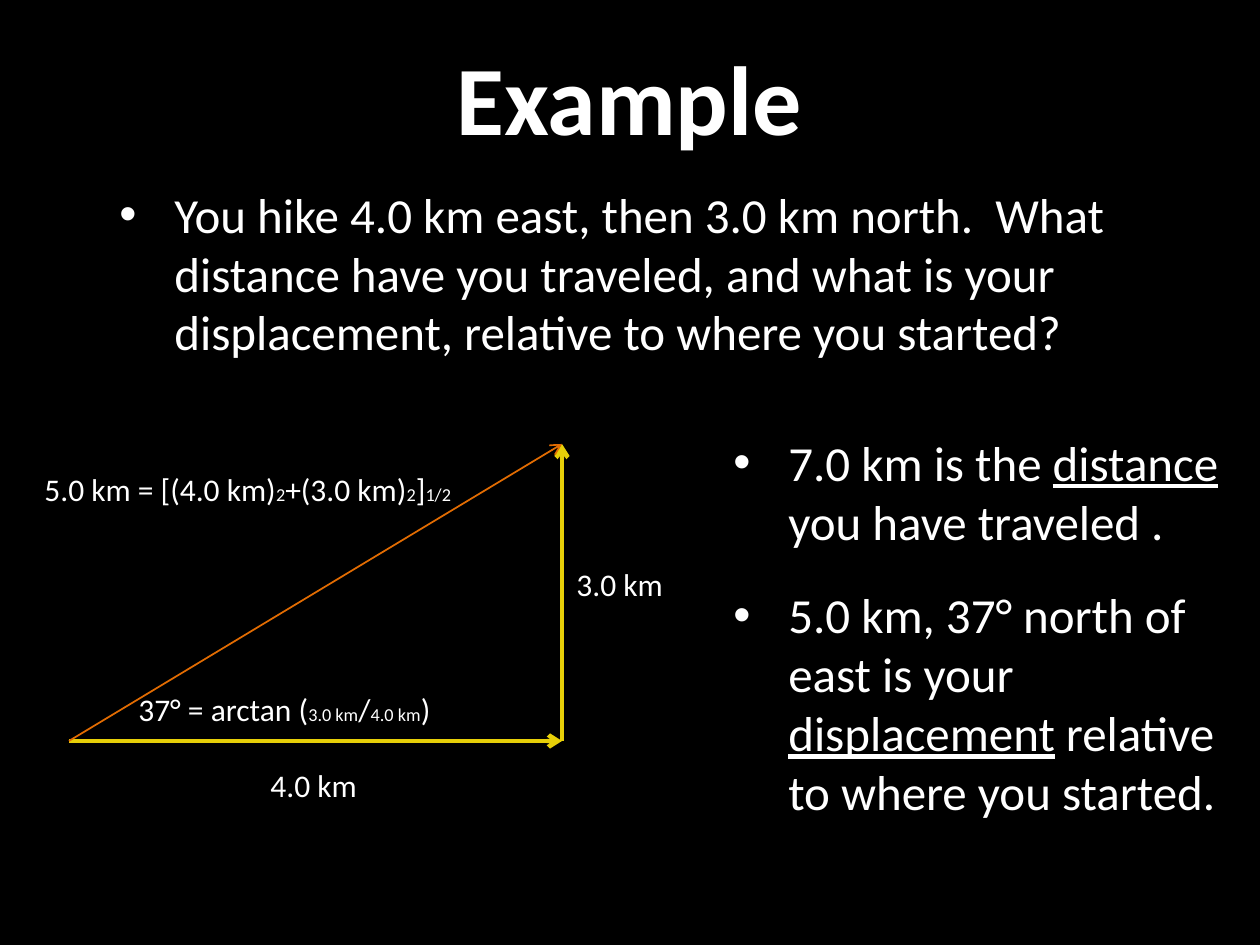
import pptx
import pptx.dml.color
import pptx.enum.shapes
import pptx.enum.text
import pptx.oxml.ns
import pptx.util
from lxml import etree

SCALE = 914400 / 126
FONT = "Calibri"
COLORS = {"back": "000000", "text": "FFFFFF", "leg": "E7CF08", "path": "E26C02"}
SUPER, SUB = 30, -25
INDENT = 55


def px(n):
    return pptx.util.Emu(round(n * SCALE))


def color(name):
    return pptx.dml.color.RGBColor.from_string(COLORS[name])


def child(parent, tag, **attrs):
    node = etree.SubElement(parent, pptx.oxml.ns.qn(tag))
    for key, value in attrs.items():
        node.set(key, str(value))
    return node


def add_run(para, text, size, bold=False, under=False, base=0):
    run = para.add_run()
    run.text = text
    font = run.font
    font.name, font.size = FONT, pptx.util.Pt(size)
    font.bold, font.underline = bold, under
    font.color.rgb = color("text")
    if base:
        run._r.get_or_add_rPr().set("baseline", str(base))


def add_box(slide, box, wrap=True):
    frame = slide.shapes.add_textbox(*map(px, box)).text_frame
    frame.word_wrap = wrap
    return frame


def add_title(slide, text, box):
    frame = add_box(slide, box)
    frame.vertical_anchor = pptx.enum.text.MSO_ANCHOR.MIDDLE
    para = frame.paragraphs[0]
    para.alignment = pptx.enum.text.PP_ALIGN.CENTER
    add_run(para, text, 56, bold=True)


def add_list(slide, items, box):
    """Add bullets; each item is a list of (text, underlined) runs."""
    frame = add_box(slide, box)
    for i, item in enumerate(items):
        para = frame.add_paragraph() if i else frame.paragraphs[0]
        props = para._p.get_or_add_pPr()
        props.set("marL", str(px(INDENT)))
        props.set("indent", str(-px(INDENT)))
        child(props, "a:buFont", typeface="Arial")
        child(props, "a:buChar", char="•")
        if i:
            para.space_before = pptx.util.Pt(20)
        for text, under in item:
            add_run(para, text, 28, under=under)


def add_label(slide, runs, box):
    """Add a one-line label from (text, baseline) runs."""
    frame = add_box(slide, box, wrap=False)
    frame.auto_size = pptx.enum.text.MSO_AUTO_SIZE.SHAPE_TO_FIT_TEXT
    for text, base in runs:
        add_run(frame.paragraphs[0], text, 18, base=base)


def add_arrow(slide, start, end, name, width):
    kind = pptx.enum.shapes.MSO_CONNECTOR.STRAIGHT
    arrow = slide.shapes.add_connector(kind, *map(px, start + end))
    arrow.line.color.rgb = color(name)
    arrow.line.width = pptx.util.Pt(width)
    child(arrow.line._get_or_add_ln(), "a:tailEnd", type="arrow")
    child(arrow._element.spPr, "a:effectLst")


def main():
    deck = pptx.Presentation()
    deck.slide_width, deck.slide_height = px(1260), px(945)
    slide = deck.slides.add_slide(deck.slide_layouts[6])
    slide.background.fill.solid()
    slide.background.fill.fore_color.rgb = color("back")

    add_title(slide, "Example", (107, 15, 1045, 163))
    add_list(slide, [
        [("You hike 4.0 km east, then 3.0 km north.  What distance have you "
          "traveled, and what is your displacement, relative to where you "
          "started?", False)],
    ], (107, 178, 1045, 218))
    add_list(slide, [
        [("7.0 km is the ", False), ("distance", True),
         (" you have traveled .", False)],
        [("5.0 km, 37° north of east is your ", False), ("displacement", True),
         (" relative to where you started.", False)],
    ], (721, 426, 539, 519))

    start, turn, end = (69, 741), (562, 741), (562, 444)
    add_arrow(slide, start, turn, "leg", 2.5)
    add_arrow(slide, turn, end, "leg", 2.5)
    add_arrow(slide, start, end, "path", 1)

    add_label(slide, [("4.0 km", 0)], (258, 760, 116, 50))
    add_label(slide, [("3.0 km", 0)], (564, 559, 115, 50))
    add_label(slide, [("5.0 km = [(4.0 km)", 0), ("2", SUPER),
                      ("+(3.0 km)", 0), ("2", SUPER), ("]", 0),
                      ("1/2", SUPER)], (32, 464, 451, 50))
    add_label(slide, [("37° = arctan (", 0), ("3.0 km", SUPER), ("/", 0),
                      ("4.0 km", SUB), (")", 0)], (126, 684, 338, 50))
    deck.save("out.pptx")


if __name__ == "__main__":
    main()
